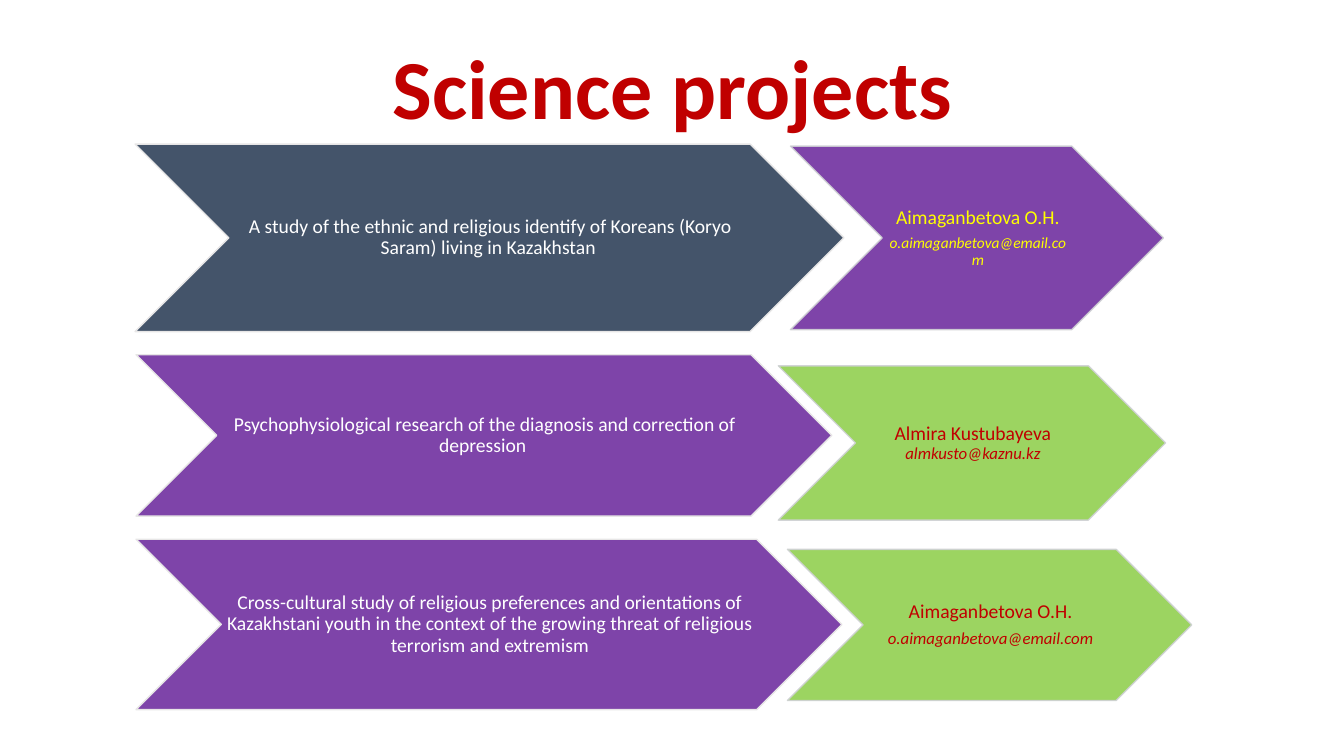
from lxml import etree
from pptx import Presentation
from pptx.dml.color import RGBColor
from pptx.enum.shapes import MSO_SHAPE
from pptx.enum.text import MSO_ANCHOR, PP_ALIGN
from pptx.oxml.ns import qn
from pptx.util import Inches, Pt

CHEVRON = MSO_SHAPE.CHEVRON
MIDDLE = MSO_ANCHOR.MIDDLE
CENTER = PP_ALIGN.CENTER

FONT = "Calibri"
WHITE, YELLOW, RED = "FFFFFF", "FFFF00", "C00000"
SLATE, PURPLE, GREEN = "44546A", "7030A0", "92D050"
PROJECT_LINE, CONTACT_LINE = "E7E6E6", "CFD1D4"


def rgb(value):
    return RGBColor.from_string(value)


def paint(fill, color, opacity=100):
    """Fill with a solid colour at the given opacity in percent."""
    fill.solid()
    fill.fore_color.rgb = rgb(color)
    if opacity < 100:
        node = fill._xPr.find(".//" + qn("a:srgbClr"))
        etree.SubElement(node, qn("a:alpha"), val=str(opacity * 1000))


def add_span(para, text, size, color, bold=False, italic=False):
    span = para.add_run()
    span.text = text
    font = span.font
    font.name, font.size = FONT, Pt(size)
    font.bold, font.italic = bold, italic
    font.color.rgb = rgb(color)


def format_para(para, space_after=0):
    para.alignment = CENTER
    para.line_spacing = 0.9
    para.space_after = Pt(space_after)


def add_title(page, text):
    box = page.shapes.add_textbox(Inches(0.92), Inches(0.4), Inches(11.5), Inches(1.03))
    frame = box.text_frame
    frame.word_wrap = True
    frame.vertical_anchor = MIDDLE
    format_para(frame.paragraphs[0])
    add_span(frame.paragraphs[0], text, 60, RED, bold=True)


def add_chevron(page, place, paras, fill, line, color, opacity=90, line_opacity=100):
    """Draw a chevron; each para is a list of (text, size, italic) spans."""
    shape = page.shapes.add_shape(CHEVRON, *map(Inches, place))
    shape.shadow.inherit = False
    paint(shape.fill, fill, opacity)
    shape.line.width = Pt(1)
    paint(shape.line.fill, line, line_opacity)

    frame = shape.text_frame
    frame.word_wrap = True
    frame.vertical_anchor = MIDDLE
    frame.margin_left, frame.margin_right = Inches(0.02), 0
    frame.margin_top = frame.margin_bottom = Inches(0.01)
    for index, spans in enumerate(paras):
        para = frame.add_paragraph() if index else frame.paragraphs[0]
        format_para(para, space_after=0.35 * spans[0][1])
        for text, size, italic in spans:
            add_span(para, text, size, color, italic=italic)


def add_project(page, place, text, fill, opacity=90):
    add_chevron(page, place, [[(text, 14, False)]], fill, PROJECT_LINE, WHITE, opacity)


def add_contact(page, place, paras, fill, color):
    add_chevron(page, place, paras, fill, CONTACT_LINE, color, line_opacity=90)


def main():
    deck = Presentation()
    deck.slide_width, deck.slide_height = Inches(13.33), Inches(7.5)
    page = deck.slides.add_slide(deck.slide_layouts[6])

    add_title(page, "Science projects")

    leader = ("Aimaganbetova O.H.", 14, False)
    leader_mail = "o.aimaganbetova@email.com"

    add_project(page, (1.34, 1.43, 7.03, 1.86),
                "A study of the ethnic and religious identify of Koreans "
                "(Koryo Saram) living in Kazakhstan ", SLATE, opacity=100)
    add_contact(page, (7.84, 1.45, 3.7, 1.82),
                [[leader], [(leader_mail, 11, True)]], PURPLE, YELLOW)

    add_project(page, (1.35, 3.52, 6.9, 1.6),
                "Psychophysiological research of the diagnosis and "
                "correction of depression ", PURPLE)
    add_contact(page, (7.72, 3.63, 3.84, 1.53),
                [[("Almira Kustubayeva ", 14, False), ("almkusto@kaznu.kz", 12, True)]],
                GREEN, RED)

    add_project(page, (1.35, 5.35, 7, 1.69),
                "Cross-cultural study of religious preferences and orientations of "
                "Kazakhstani youth in the context of the growing threat of "
                "religious terrorism and extremism", PURPLE)
    add_contact(page, (7.81, 5.45, 4.01, 1.5),
                [[leader], [(leader_mail, 12, True)]], GREEN, RED)

    deck.save("out.pptx")


if __name__ == "__main__":
    main()
